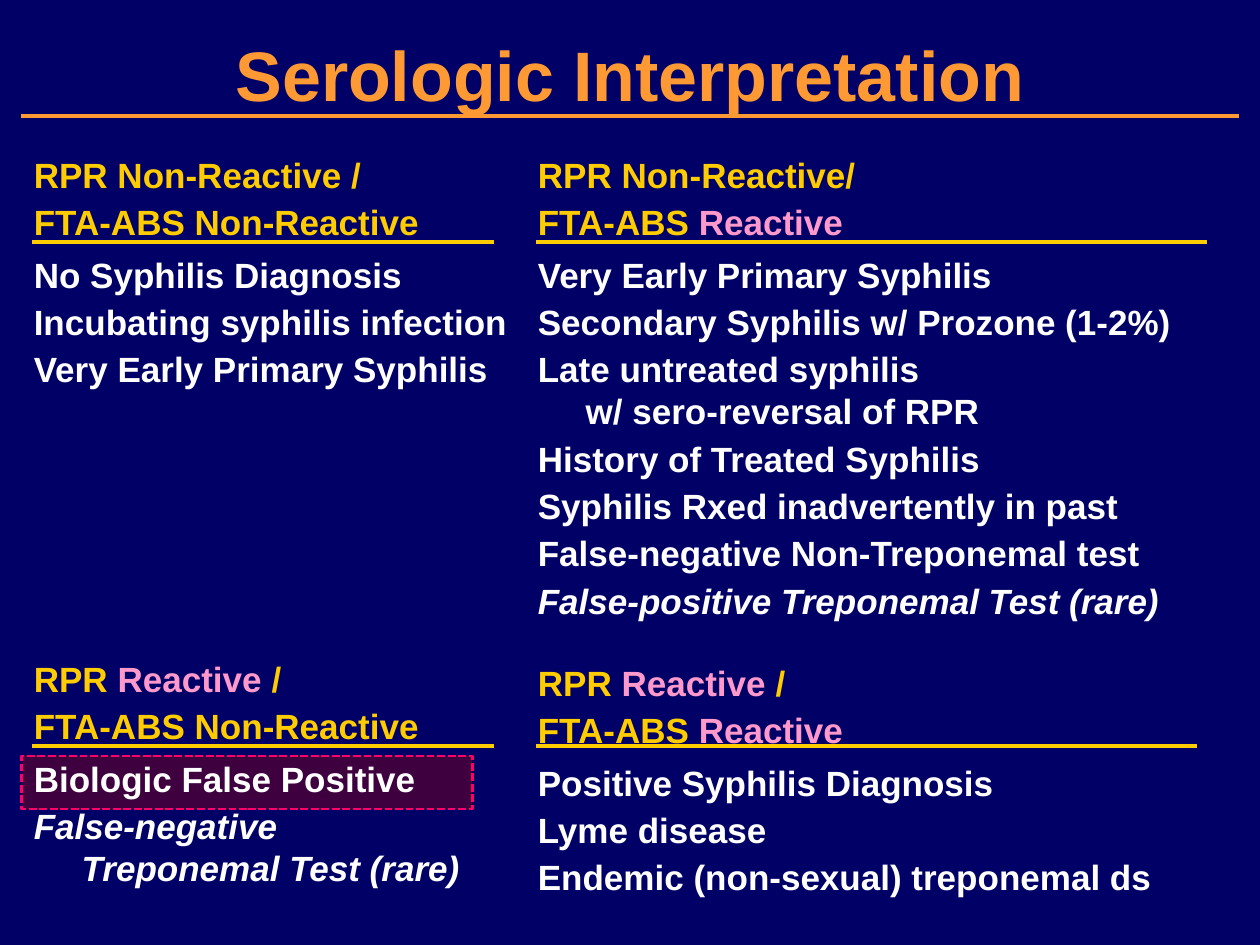
from dataclasses import dataclass

from lxml.etree import SubElement
from pptx import Presentation
from pptx.dml.color import RGBColor
from pptx.enum.dml import MSO_LINE
from pptx.enum.shapes import MSO_CONNECTOR, MSO_SHAPE
from pptx.enum.text import MSO_ANCHOR, PP_ALIGN
from pptx.oxml.ns import qn
from pptx.util import Inches, Pt


@dataclass(frozen=True)
class Theme:
    font: str = "Arial"
    background: RGBColor = RGBColor(0x00, 0x00, 0x66)
    title: RGBColor = RGBColor(0xFF, 0x99, 0x33)
    heading: RGBColor = RGBColor(0xFF, 0xCC, 0x00)
    reactive: RGBColor = RGBColor(0xFF, 0x99, 0xCC)
    finding: RGBColor = RGBColor(0xFF, 0xFF, 0xFF)
    highlight_fill: RGBColor = RGBColor(0x3E, 0x00, 0x3E)
    highlight_line: RGBColor = RGBColor(0xFF, 0x00, 0x66)
    title_size: int = 40
    body_size: int = 20


THEME = Theme()

# Each group: left, top, width, height, rule y, rule end, headings, findings, rare finding
GROUPS = [
    (4.17, 1.17, 5.42, 3.9, 1.92, 9.58,
     ["RPR Non-Reactive/", "FTA-ABS Reactive"],
     ["Very Early Primary Syphilis", "Secondary Syphilis w/ Prozone (1-2%)",
      "Late untreated syphilis\vw/ sero-reversal of RPR",
      "History of Treated Syphilis", "Syphilis Rxed inadvertently in past",
      "False-negative Non-Treponemal test"],
     "False-positive Treponemal Test (rare)"),
    (0.17, 1.17, 4.5, 2, 1.92, 3.92,
     ["RPR Non-Reactive /", "FTA-ABS Non-Reactive"],
     ["No Syphilis Diagnosis", "Incubating syphilis infection",
      "Very Early Primary Syphilis"],
     None),
    (0.17, 5.17, 4.5, 2, 5.92, 3.92,
     ["RPR Reactive /", "FTA-ABS Non-Reactive"],
     ["Biologic False Positive"],
     "False-negative\vTreponemal Test (rare)"),
    (4.17, 5.2, 5.42, 2, 5.92, 9.5,
     ["RPR Reactive /", "FTA-ABS Reactive"],
     ["Positive Syphilis Diagnosis", "Lyme disease",
      "Endemic (non-sexual) treponemal ds"],
     None),
]


def style_run(run, color, size=THEME.body_size, italic=False):
    run.font.name = THEME.font
    run.font.size = Pt(size)
    run.font.bold = True
    run.font.italic = italic
    run.font.color.rgb = color


def add_text_frame(slide, left, top, width, height):
    box = slide.shapes.add_textbox(Inches(left), Inches(top), Inches(width), Inches(height))
    box.text_frame.word_wrap = True
    return box.text_frame


def add_title(slide, text):
    frame = add_text_frame(slide, 0.75, 0.17, 8.5, 0.83)
    frame.vertical_anchor = MSO_ANCHOR.MIDDLE
    frame.text = text
    title = frame.paragraphs[0]
    title.alignment = PP_ALIGN.CENTER
    style_run(title.runs[0], THEME.title, THEME.title_size)


def add_rule(slide, start, end, y, color, width):
    rule = slide.shapes.add_connector(
        MSO_CONNECTOR.STRAIGHT, Inches(start), Inches(y), Inches(end), Inches(y))
    rule.line.color.rgb = color
    rule.line.width = Pt(width)
    SubElement(rule._element.spPr, qn("a:effectLst"))


def add_highlight(slide):
    highlight = slide.shapes.add_shape(
        MSO_SHAPE.RECTANGLE, Inches(0.17), Inches(6), Inches(3.58), Inches(0.42))
    highlight.shadow.inherit = False
    highlight.fill.solid()
    highlight.fill.fore_color.rgb = THEME.highlight_fill
    highlight.line.color.rgb = THEME.highlight_line
    highlight.line.width = Pt(1.5)
    highlight.line.dash_style = MSO_LINE.SQUARE_DOT


def format_paragraph(paragraph, space_after):
    paragraph.space_after = Pt(space_after)
    # Hanging indent for wrapped findings
    properties = paragraph._p.get_or_add_pPr()
    properties.set("marL", str(Inches(0.38)))
    properties.set("indent", str(-Inches(0.38)))


def fill_heading(paragraph, text):
    """Set a heading, with a standalone "Reactive" in its own colour."""
    lead, reactive, tail = text.partition(" Reactive")
    parts = [(lead, THEME.heading), (reactive, THEME.reactive), (tail, THEME.heading)]
    for part, color in parts:
        if part:
            run = paragraph.add_run()
            run.text = part
            style_run(run, color)


def fill_finding(paragraph, text, italic=False):
    paragraph.text = text
    for run in paragraph.runs:
        style_run(run, THEME.finding, italic=italic)


def add_group(slide, left, top, width, height, rule_y, rule_end, headings, findings, rare):
    frame = add_text_frame(slide, left, top, width, height)
    paragraph = frame.paragraphs[0]
    for heading, space_after in zip(headings, (3, 6)):
        fill_heading(paragraph, heading)
        format_paragraph(paragraph, space_after)
        paragraph = frame.add_paragraph()
    for index, finding in enumerate(findings):
        if index:
            paragraph = frame.add_paragraph()
        fill_finding(paragraph, finding)
        format_paragraph(paragraph, 3)
    if rare:
        paragraph = frame.add_paragraph()
        fill_finding(paragraph, rare, italic=True)
        format_paragraph(paragraph, 3)
    add_rule(slide, left + 0.08, rule_end, rule_y, THEME.heading, 2)


def main():
    presentation = Presentation()
    presentation.slide_width = Inches(10)
    presentation.slide_height = Inches(7.5)
    slide = presentation.slides.add_slide(presentation.slide_layouts[6])
    slide.background.fill.solid()
    slide.background.fill.fore_color.rgb = THEME.background

    # Highlight sits behind the text
    add_highlight(slide)

    # Title and its rule
    add_title(slide, "Serologic Interpretation")
    add_rule(slide, 0.17, 9.83, 0.92, THEME.title, 2.25)

    # Four combinations of test results
    for group in GROUPS:
        add_group(slide, *group)

    presentation.save("out.pptx")


if __name__ == "__main__":
    main()
